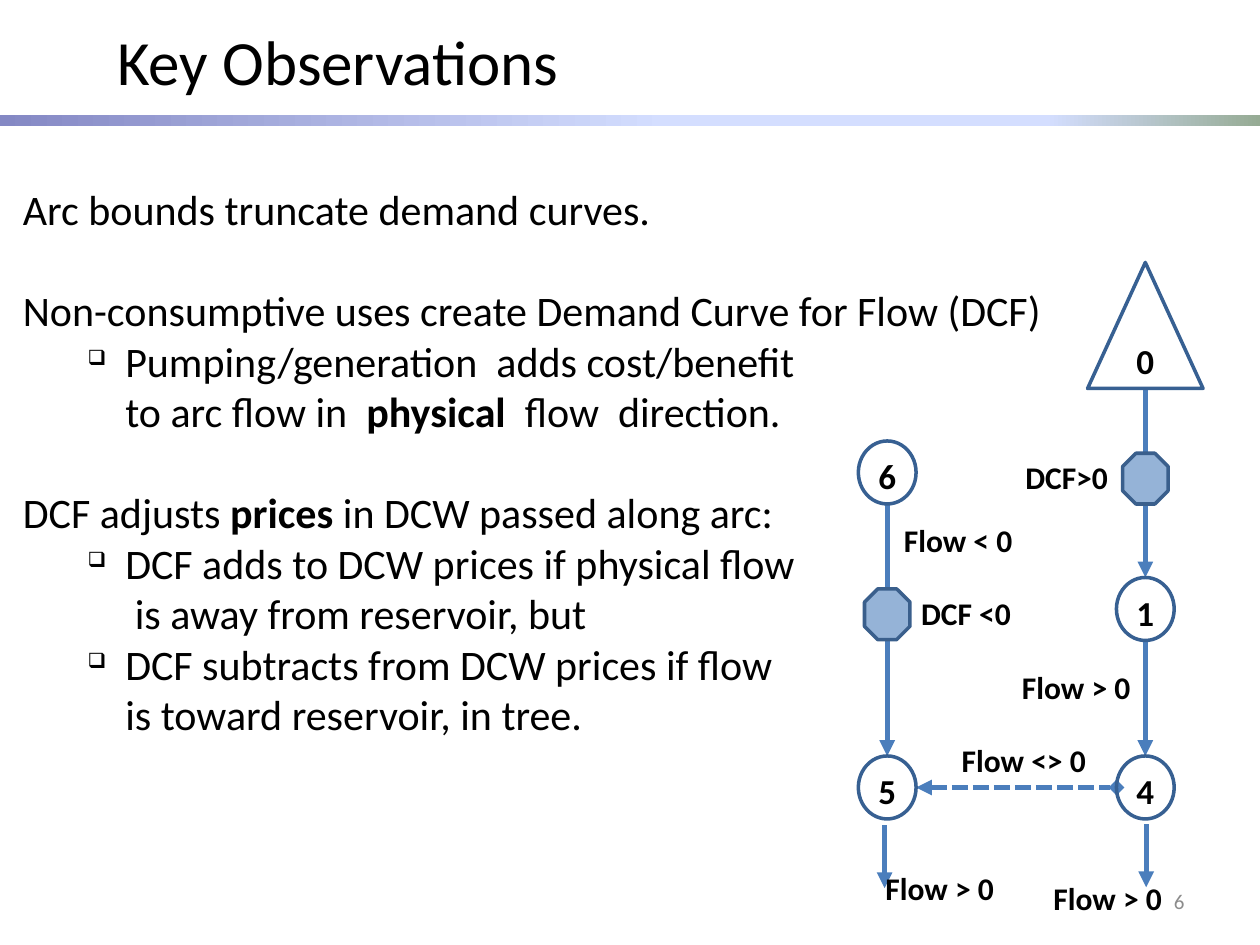
from pptx import Presentation
from pptx.util import Pt
from pptx.dml.color import RGBColor
from pptx.enum.dml import MSO_LINE
from pptx.enum.shapes import MSO_CONNECTOR, MSO_SHAPE
from pptx.enum.text import MSO_ANCHOR, PP_ALIGN
from pptx.oxml.ns import qn
from lxml import etree

STRAIGHT = MSO_CONNECTOR.STRAIGHT
RECT, TRI, OVAL, OCT = (MSO_SHAPE.RECTANGLE, MSO_SHAPE.ISOSCELES_TRIANGLE,
                        MSO_SHAPE.OVAL, MSO_SHAPE.OCTAGON)
TOP, MIDDLE = MSO_ANCHOR.TOP, MSO_ANCHOR.MIDDLE
LEFT, CENTER, RIGHT = PP_ALIGN.LEFT, PP_ALIGN.CENTER, PP_ALIGN.RIGHT
DASH = MSO_LINE.SQUARE_DOT

THEME = {
    "font": "Calibri", "ink": "000000", "muted": "8C8C8C",
    "node": "376092", "arc": "4B7EBC", "gate": "95B3D7", "gate_line": "3A5F8C",
    "band": [(0, "8488C4"), (53, "D4DEFF"), (83, "D4DEFF"), (100, "96AB94")],
    "title": 36, "body": 24, "node_size": 20, "label": 18, "number": 12,
}


def write(p, text, size, bold=False, color="ink"):
    for i, line in enumerate(text.split("\n")):
        if i:
            p.add_line_break()
        r = p.add_run()
        r.text = line
        r.font.color.rgb = RGBColor.from_string(THEME[color])
        fmt = {"name": THEME["font"], "size": Pt(THEME[size]), "bold": bold}
        for key, value in fmt.items():
            setattr(r.font, key, value)


def text_box(x, y, w, h, wrap=True, anchor=TOP):
    tf = s.shapes.add_textbox(Pt(x), Pt(y), Pt(w), Pt(h)).text_frame
    for key, value in {"word_wrap": wrap, "vertical_anchor": anchor}.items():
        setattr(tf, key, value)
    return tf


prs = Presentation()
prs.slide_width, prs.slide_height = Pt(720), Pt(540)
s = prs.slides.add_slide(prs.slide_layouts[6])

write(text_box(60, 0, 648, 68.4, anchor=MIDDLE).paragraphs[0], "Key Observations", "title")

band = s.shapes.add_shape(RECT, Pt(0), Pt(66), Pt(720), Pt(6))
band.shadow.inherit = False
band.line.fill.background()
band.fill.gradient()
band.fill.gradient_angle = 0
stops = band._element.spPr.find(".//" + qn("a:gsLst"))
for gs in list(stops):
    stops.remove(gs)
for pos, color in THEME["band"]:
    gs = etree.SubElement(stops, qn("a:gs"), pos=str(pos * 1000))
    etree.SubElement(gs, qn("a:srgbClr"), val=color)

body = [
    (False, 0, [("Arc bounds truncate demand curves.", False)]),
    (False, 29, [("Non-consumptive uses create Demand Curve for Flow (DCF)", False)]),
    (True, 0, [("Pumping/generation  adds cost/benefit \nto arc flow in  ", False),
               ("physical", True), ("  flow  direction.", False)]),
    (False, 29, [("DCF adjusts ", False), ("prices ", True),
                 ("in DCW passed along arc:", False)]),
    (True, 0, [("DCF adds to DCW prices if physical flow\n is away from reservoir, but", False)]),
    (True, 0, [("DCF subtracts from DCW prices if flow\nis toward reservoir, in tree.", False)]),
]
tf = text_box(6, 101.5, 714, 327)
for i, (bullet, before, runs) in enumerate(body):
    p = tf.add_paragraph() if i else tf.paragraphs[0]
    p.space_before = Pt(before)
    if bullet:
        pPr = p._p.get_or_add_pPr()
        pPr.set("marL", str(Pt(58.5)))
        pPr.set("indent", str(Pt(-21.5)))
        etree.SubElement(pPr, qn("a:buSzPct"), val="50000")
        etree.SubElement(pPr, qn("a:buChar"), char="❑")
    for text, bold in runs:
        write(p, text, "body", bold)

p = text_box(516, 500.4, 168, 28.8, anchor=MIDDLE).paragraphs[0]
p.alignment = RIGHT
write(p, "6", "number", color="muted")

left_x, right_x = 507, 654.5
nodes = [
    (TRI, right_x, 186, 66, 72, "0"),
    (OVAL, right_x, 348, 33, 36, "1"),
    (OVAL, right_x, 450, 33, 36, "4"),
    (OVAL, left_x, 450, 33, 36, "5"),
    (OVAL, left_x, 270, 33, 36, "6"),
]
arcs = [
    (right_x, 366, right_x, 432, None, "triangle"),
    (left_x + 16.5, 450, right_x - 16.5, 450, "triangle", "diamond"),
    (left_x, 288, left_x, 432, None, "triangle"),
    (right_x, 222, right_x, 330, None, "triangle"),
    (505.5, 471.5, 505.5, 507.5, None, "triangle"),
    (655, 471, 655, 507, None, "triangle"),
]
gates = [(OCT, left_x, 351, 26, 29, ""), (OCT, right_x, 273.5, 26, 29, "")]

for x1, y1, x2, y2, head, tail in arcs:
    c = s.shapes.add_connector(STRAIGHT, Pt(x1), Pt(y1), Pt(x2), Pt(y2))
    c.line.color.rgb = RGBColor.from_string(THEME["arc"])
    c.line.width = Pt(3)
    if head:
        c.line.dash_style = DASH
    ln = c.line._get_or_add_ln()
    for tag, kind in (("a:headEnd", head), ("a:tailEnd", tail)):
        if kind:
            etree.SubElement(ln, qn(tag), type=kind)
    etree.SubElement(c._element.spPr, qn("a:effectLst"))

for kind, cx, cy, w, h, text in nodes + gates:
    sp = s.shapes.add_shape(kind, Pt(cx - w / 2), Pt(cy - h / 2), Pt(w), Pt(h))
    sp.shadow.inherit = False
    sp.line.width = Pt(2)
    sp.line.color.rgb = RGBColor.from_string(THEME["node" if text else "gate_line"])
    if not text:
        sp.fill.solid()
        sp.fill.fore_color.rgb = RGBColor.from_string(THEME["gate"])
        continue
    sp.fill.background()
    tf = sp.text_frame
    fmt = {"margin_left": 0, "margin_right": 0, "margin_top": Pt(3.6), "margin_bottom": 0,
           "word_wrap": False, "vertical_anchor": MIDDLE}
    for key, value in fmt.items():
        setattr(tf, key, value)
    p = tf.paragraphs[0]
    p.alignment = CENTER
    write(p, text, "node_size", True)

labels = [
    (507, 294, 81, "Flow < 0"), (576, 378, 78, "Flow > 0"),
    (540, 420, 90, "Flow <> 0"), (594, 499, 78, "Flow > 0"),
    (498, 493, 78, "Flow > 0"), (516, 336, 72, "DCF <0"),
    (576, 258, 67, "DCF>0"),
]
for x, y, w, text in labels:
    p = text_box(x, y, w, 29, wrap=False).paragraphs[0]
    p.alignment = CENTER
    write(p, text, "label", True)

prs.save("out.pptx")
